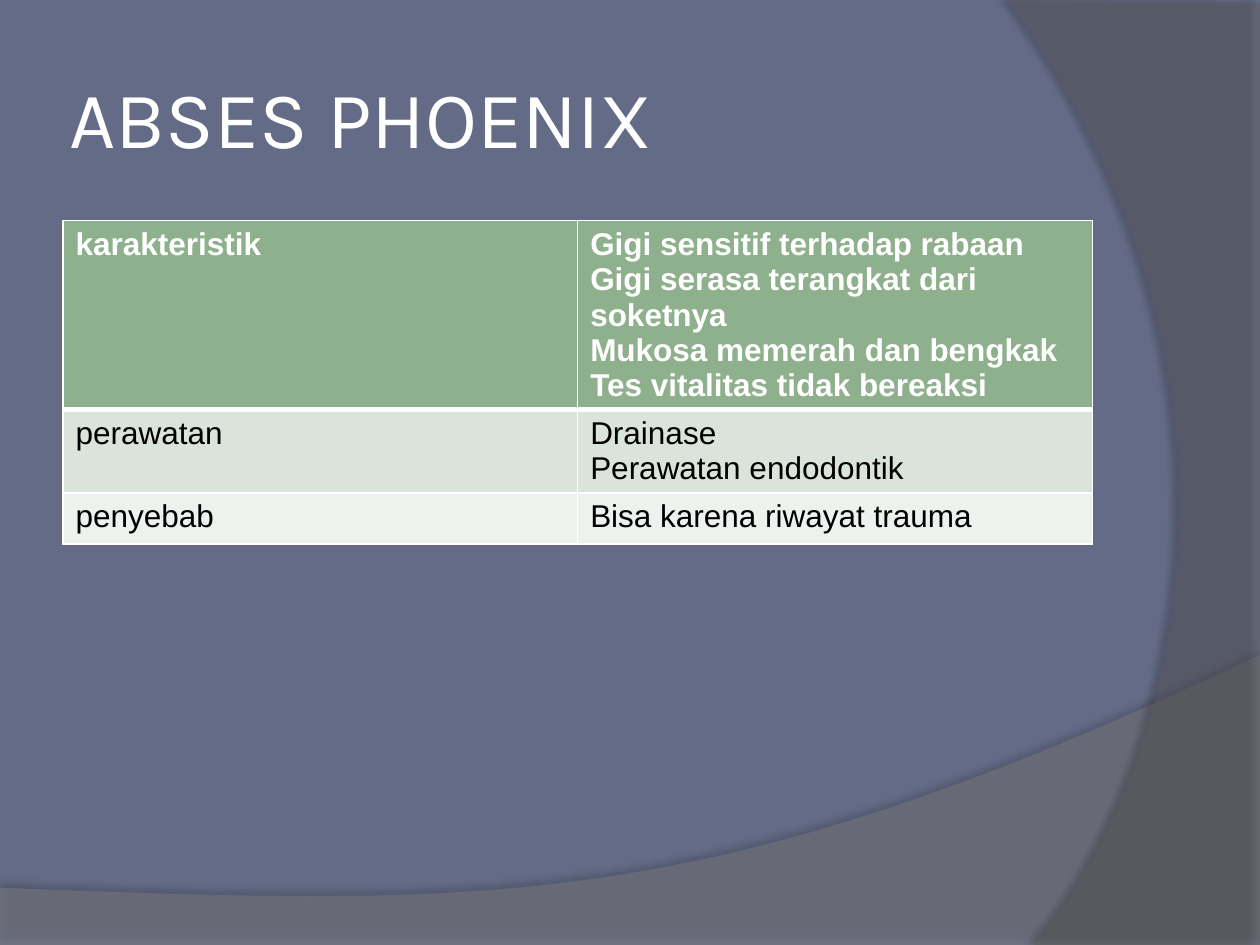
from lxml.etree import SubElement
from pptx import Presentation
from pptx.dml.color import RGBColor
from pptx.enum.text import MSO_ANCHOR, PP_ALIGN
from pptx.oxml import parse_xml
from pptx.oxml.ns import nsdecls, qn
from pptx.util import Cm, Pt

SLATE = RGBColor(0x64, 0x6B, 0x86)
WAVE_GREY = RGBColor(0x7F, 0x7F, 0x7F)
ARC_GREY = RGBColor(0x5E, 0x5E, 0x5E)
WHITE = RGBColor(0xFF, 0xFF, 0xFF)
BLACK = RGBColor(0x00, 0x00, 0x00)
GREEN = RGBColor(0x8F, 0xB0, 0x8C)
PALE_GREEN = RGBColor(0xDB, 0xE4, 0xDA)
MIST_GREEN = RGBColor(0xEE, 0xF2, 0xEE)

CURVE_STEPS = 60


def write_text(frame, lines, font="Arial", size=18, color=BLACK, bold=False):
    for i, line in enumerate(lines):
        paragraph = frame.paragraphs[0] if i == 0 else frame.add_paragraph()
        paragraph.alignment = PP_ALIGN.LEFT
        run = paragraph.add_run()
        run.text = line
        run.font.name = font
        run.font.size = Pt(size)
        run.font.bold = bold
        run.font.color.rgb = color


def bezier_points(*controls):
    """Points along a cubic Bezier curve, in centimetres."""
    points = []
    for step in range(CURVE_STEPS + 1):
        t = step / CURVE_STEPS
        weights = ((1 - t) ** 3, 3 * t * (1 - t) ** 2, 3 * t ** 2 * (1 - t), t ** 3)
        points.append(tuple(sum(w * c[axis] for w, c in zip(weights, controls))
                            for axis in (0, 1)))
    return points


presentation = Presentation()
presentation.slide_width = Cm(25.4)
presentation.slide_height = Cm(19.05)
slide = presentation.slides.add_slide(presentation.slide_layouts[5])
slide.background.fill.solid()
slide.background.fill.fore_color.rgb = SLATE

# Background swooshes: corners, curve, colour, opacity, shadow (opacity, distance, angle)
wave_curve = bezier_points((25.4, 13.2), (14.2, 18.52), (9.93, 18.26), (0, 17.9))
arc_curve = bezier_points((20.85, 19.05), (23.75, 15.72), (25.86, 7.62), (20.32, 0))
swooshes = [
    ([(0, 17.9), (0, 19.07), (25.4, 19.07)], wave_curve, WAVE_GREY, 45, (35, 3.5, 270)),
    ([(25.4, 0.05), (25.4, 19.05)], arc_curve, ARC_GREY, 40, (45, 4, 180)),
]
for layer, (corners, curve, color, opacity, shadow) in enumerate(swooshes):
    start, *rest = [(Cm(x), Cm(y)) for x, y in corners + curve]
    builder = slide.shapes.build_freeform(*start)
    builder.add_line_segments(rest, close=True)
    swoosh = builder.convert_to_shape()
    swoosh.fill.solid()
    swoosh.fill.fore_color.rgb = color
    swoosh.line.fill.background()
    swoosh.shadow.inherit = False
    properties = swoosh.element.spPr
    SubElement(properties.find(".//" + qn("a:srgbClr")), qn("a:alpha"), val=str(opacity * 1000))
    shadow_opacity, distance, angle = shadow
    properties.find(qn("a:effectLst")).append(parse_xml(
        f'<a:outerShdw {nsdecls("a")} blurRad="{Pt(4)}" dist="{Pt(distance)}" '
        f'dir="{angle * 60000}" rotWithShape="0"><a:srgbClr val="{BLACK}">'
        f'<a:alpha val="{shadow_opacity * 1000}"/></a:srgbClr></a:outerShdw>'))
    # Keep the swooshes behind the title
    slide.shapes.element.insert(2 + layer, swoosh.element)

# Title
title = slide.shapes.title
title.left, title.top, title.width, title.height = Cm(1.27), Cm(0.76), Cm(20.75), Cm(3.18)
heading = title.text_frame
heading.word_wrap = True
heading.vertical_anchor = MSO_ANCHOR.MIDDLE
heading.margin_left = heading.margin_right = Cm(0.13)
heading.margin_top = heading.margin_bottom = Cm(0.13)
write_text(heading, ["ABSES PHOENIX"], font="Karla", size=46, color=WHITE)

# Table: fill, text colour, bold, bottom border width, cell paragraphs
rows = [
    (GREEN, WHITE, True, 3, [
        ["karakteristik"],
        ["Gigi sensitif terhadap rabaan", "Gigi serasa terangkat dari soketnya",
         "Mukosa memerah dan bengkak", "Tes vitalitas tidak bereaksi"]]),
    (PALE_GREEN, BLACK, False, 1, [
        ["perawatan"], ["Drainase", "Perawatan endodontik"]]),
    (MIST_GREEN, BLACK, False, 1, [
        ["penyebab"], ["Bisa karena riwayat trauma"]]),
]
table = slide.shapes.add_table(len(rows), 2, Cm(1.27), Cm(4.45), Cm(20.75), Cm(3.09)).table
top_width = 1
for r, (fill, color, bold, bottom_width, cells) in enumerate(rows):
    table.rows[r].height = Cm(1.03)
    for c, lines in enumerate(cells):
        cell = table.cell(r, c)
        cell.fill.solid()
        cell.fill.fore_color.rgb = fill
        write_text(cell.text_frame, lines, color=color, bold=bold)
        borders = [("L", 1), ("R", 1), ("T", top_width), ("B", bottom_width)]
        for position, (side, width) in enumerate(borders):
            cell._tc.get_or_add_tcPr().insert(position, parse_xml(
                f'<a:ln{side} {nsdecls("a")} w="{Pt(width)}"><a:solidFill>'
                f'<a:srgbClr val="{WHITE}"/></a:solidFill></a:ln{side}>'))
    top_width = bottom_width

presentation.save("out.pptx")
